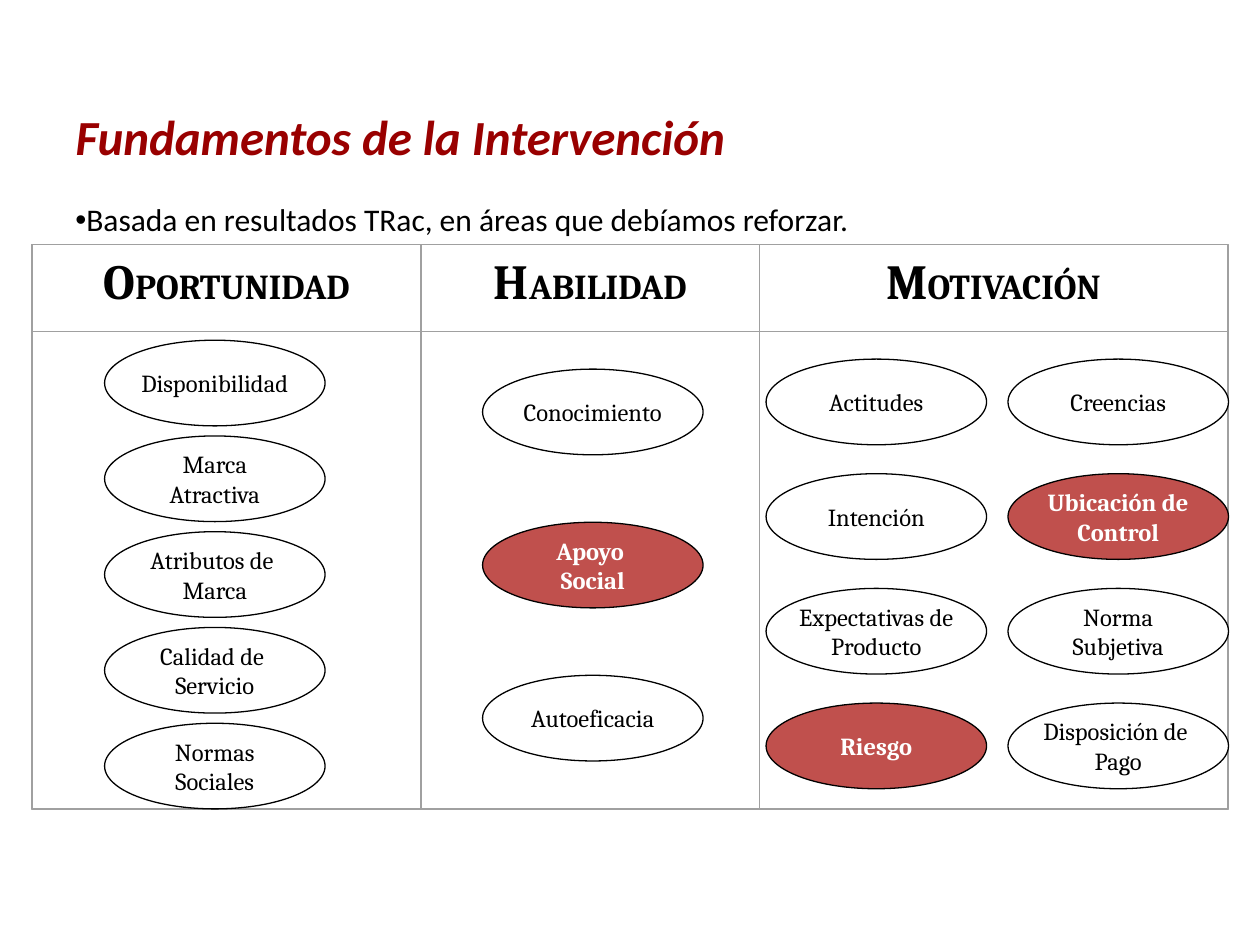
from lxml import etree
from pptx import Presentation
from pptx.dml.color import RGBColor
from pptx.enum.shapes import MSO_SHAPE
from pptx.enum.text import MSO_ANCHOR, PP_ALIGN
from pptx.oxml.ns import qn
from pptx.util import Inches, Pt

RECT, OVAL = MSO_SHAPE.RECTANGLE, MSO_SHAPE.OVAL
TOP, MIDDLE = MSO_ANCHOR.TOP, MSO_ANCHOR.MIDDLE
LEFT, CENTER = PP_ALIGN.LEFT, PP_ALIGN.CENTER

COLORS = {"title": "990000", "ink": "000000", "paper": "FFFFFF",
          "grid": "A0A0A0", "accent": "C0504D"}
TITLE = "Fundamentos de la Intervención"
LEAD = "Basada en resultados TRac, en áreas que debíamos reforzar."
FOCUS = {"Apoyo \nSocial", "Ubicación de\nControl", "Riesgo"}

# heading, column width
HEADS = [("OPORTUNIDAD", 3.08), ("HABILIDAD", 2.69), ("MOTIVACIÓN", 3.71)]
# left edge, first top, row pitch, labels
STACKS = [
    (0.83, 2.7, 0.76, ["Disponibilidad", "Marca\nAtractiva",
                       "Atributos de \nMarca", "Calidad de \nServicio",
                       "Normas\nSociales"]),
    (3.83, 2.93, 1.215, ["Conocimiento", "Apoyo \nSocial", "Autoeficacia"]),
    (6.08, 2.85, 0.91, ["Actitudes", "Intención",
                        "Expectativas de\nProducto", "Riesgo"]),
    (8, 2.85, 0.91, ["Creencias", "Ubicación de\nControl",
                     "Norma\nSubjetiva", "Disposición de \nPago"]),
]
GRID_X, GRID_Y, HEAD_H, BODY_H = 0.26, 1.94, 0.69, 3.79
OVAL_W, OVAL_H = 1.75, 0.68


def color(name):
    return RGBColor.from_string(COLORS[name])


def style(font, face, size, tint, bold=False, italic=False):
    font.name, font.size, font.bold, font.italic = face, Pt(size), bold, italic
    font.color.rgb = color(tint)


def draw(kind, box, line, width, fill=None):
    shape = slide.shapes.add_shape(kind, *map(Inches, box))
    shape.shadow.inherit = False
    if fill:
        shape.fill.solid()
        shape.fill.fore_color.rgb = color(fill)
    else:
        shape.fill.background()
    shape.line.color.rgb = color(line)
    shape.line.width = Pt(width)
    return shape


def add_head(text, left, width):
    """Draw a heading cell with a large initial and the cell below it."""
    cell = draw(RECT, (left, GRID_Y, width, HEAD_H), "grid", 0)
    draw(RECT, (left, GRID_Y + HEAD_H, width, BODY_H), "grid", 0)
    frame = cell.text_frame
    frame.vertical_anchor = TOP
    para = frame.paragraphs[0]
    para.alignment = CENTER
    for part, size in ((text[0], 28), (text[1:], 20)):
        run = para.add_run()
        run.text = part
        style(run.font, "Cambria", size, "ink", bold=True)


def add_oval(text, left, top):
    focus = text in FOCUS
    shape = draw(OVAL, (left, top, OVAL_W, OVAL_H), "ink", 0.75,
                 "accent" if focus else "paper")
    frame = shape.text_frame
    frame.word_wrap = False
    frame.vertical_anchor = MIDDLE
    frame.text = text
    for para in frame.paragraphs:
        para.alignment = CENTER
        style(para.font, "Cambria", 14, "paper" if focus else "ink", focus)


deck = Presentation()
deck.slide_width, deck.slide_height = Inches(10), Inches(7.5)
slide = deck.slides.add_slide(deck.slide_layouts[5])

title = slide.shapes.title
title.left, title.top = Inches(0.5), Inches(0.3)
title.width, title.height = Inches(6.94), Inches(1.27)
frame = title.text_frame
frame.text = TITLE
frame.vertical_anchor = MIDDLE
frame.margin_top = Inches(0.33)
para = frame.paragraphs[0]
para.alignment = LEFT
style(para.font, "Calibri", 28, "title", bold=True, italic=True)

lead = slide.shapes.add_textbox(*map(Inches, (0.5, 1.57, 7.65, 0.61)))
lead.text_frame.word_wrap = True
para = lead.text_frame.paragraphs[0]
para.text = LEAD
para.line_spacing = 0.9
props = para._p.get_or_add_pPr()
etree.SubElement(props, qn("a:buFont"), typeface="Arial")
etree.SubElement(props, qn("a:buChar"), char="•")
style(para.font, "Calibri", 18, "ink")

left = GRID_X
for text, width in HEADS:
    add_head(text, left, width)
    left += width
draw(RECT, (0.25, GRID_Y, 9.5, HEAD_H + BODY_H), "grid", 0.87)

for left, first, pitch, labels in STACKS:
    for row, text in enumerate(labels):
        add_oval(text, left, first + row * pitch)

deck.save("out.pptx")
